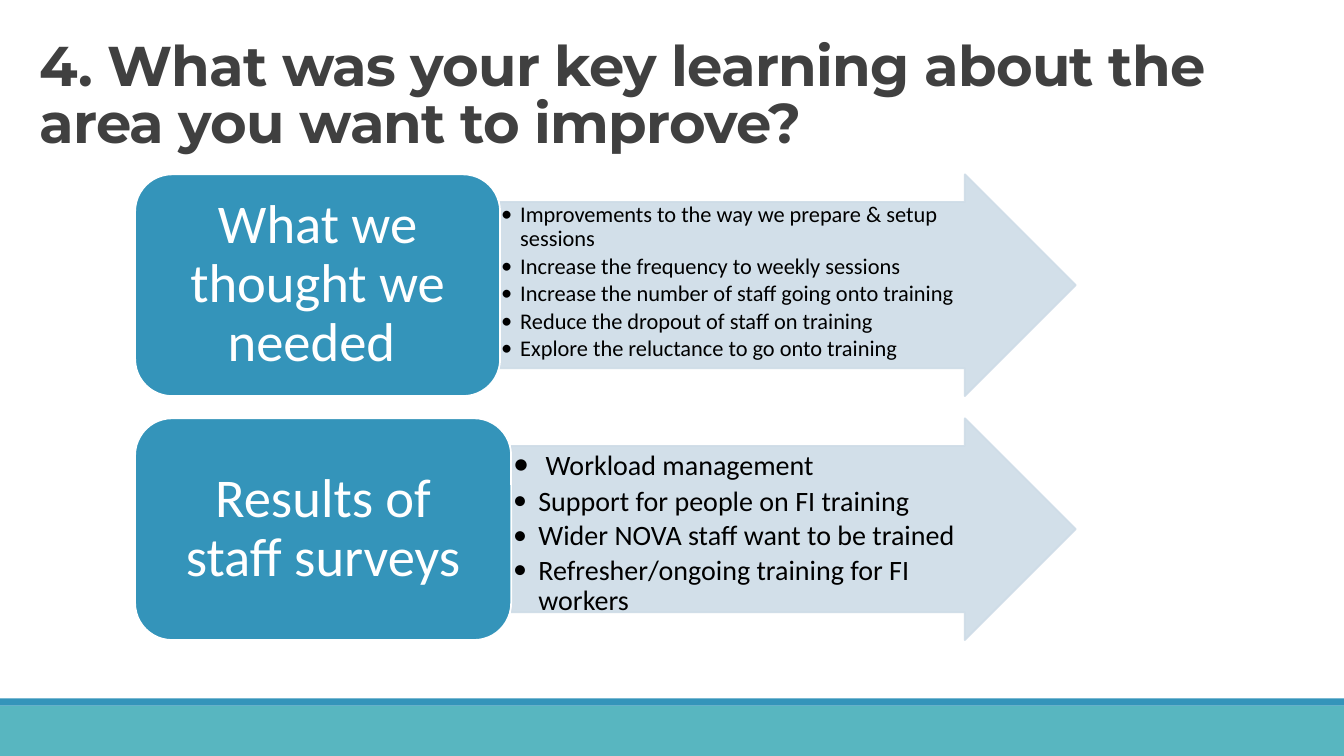
from lxml import etree
from pptx import Presentation
from pptx.dml.color import RGBColor
from pptx.enum.shapes import MSO_SHAPE
from pptx.enum.text import MSO_ANCHOR, MSO_AUTO_SIZE, PP_ALIGN
from pptx.oxml.ns import qn
from pptx.util import Inches, Pt

RECTANGLE, ROUNDED = MSO_SHAPE.RECTANGLE, MSO_SHAPE.ROUNDED_RECTANGLE
ARROW = MSO_SHAPE.RIGHT_ARROW
TOP, MIDDLE, BOTTOM = MSO_ANCHOR.TOP, MSO_ANCHOR.MIDDLE, MSO_ANCHOR.BOTTOM
LEFT, CENTER = PP_ALIGN.LEFT, PP_ALIGN.CENTER
COLORS = {"teal": "58B6C0", "blue": "3494BA", "pale": "CEDCE7",
          "title": "404040", "black": "000000", "white": "FFFFFF"}

presentation = Presentation()
presentation.slide_width = Inches(13.33)
presentation.slide_height = Inches(7.5)
slide = presentation.slides.add_slide(presentation.slide_layouts[5])


def add_block(kind, left, top, width, height, fill, line=None):
    shape = slide.shapes.add_shape(
        kind, Inches(left), Inches(top), Inches(width), Inches(height))
    shape.shadow.inherit = False
    shape.fill.solid()
    shape.fill.fore_color.rgb = RGBColor.from_string(COLORS[fill])
    if line:
        shape.line.color.rgb = RGBColor.from_string(COLORS[line])
        shape.line.width = Pt(1.25)
    else:
        shape.line.fill.background()
    return shape


def add_run(paragraph, text, size, color, font="Calibri"):
    run = paragraph.add_run()
    run.text = text
    run.font.size = Pt(size)
    run.font.name = font
    run.font.color.rgb = RGBColor.from_string(COLORS[color])
    return run


# Bottom bands
add_block(RECTANGLE, 0, 7, 13.33, 0.5, "teal")
add_block(RECTANGLE, 0, 6.93, 13.33, 0.07, "blue")

# Title
title = slide.shapes.title
title.left, title.top = Inches(0.29), Inches(0.08)
title.width, title.height = Inches(13.04), Inches(1.51)
title.text_frame.word_wrap = True
title.text_frame.auto_size = MSO_AUTO_SIZE.NONE
title.text_frame.vertical_anchor = BOTTOM
paragraph = title.text_frame.paragraphs[0]
paragraph.alignment = LEFT
paragraph.line_spacing = 0.85
run = add_run(paragraph, "4. What was your key learning about the area you want to improve?",
              40, "title", "Montserrat")
run.font.bold = True
run._r.get_or_add_rPr().set("spc", "-50")

# Rows: heading, heading width, bullet size, indent, inset, bullets as runs
rows = [
    ("What we thought we needed ", 3.62, 16, 0.19, 0.01, [
        [("Improvements to the way we prepare & setup sessions", 16)],
        [("Increase the frequency to weekly sessions", 16)],
        [("Increase the number of staff going onto training", 16)],
        [("Reduce the dropout of staff on training", 16)],
        [("Explore the reluctance to go onto training", 16)],
    ]),
    ("Results of staff surveys", 3.73, 20, 0.25, 0.02, [
        [(" ", 23), ("Workload management", 20)],
        [("Support for people on FI training", 20)],
        [("Wider NOVA staff want to be trained", 20)],
        [("Refresher/ongoing training for FI workers", 20)],
    ]),
]
BOX_LEFT, ARROW_RIGHT, ROW_TOP, ROW_HEIGHT, ROW_STEP = 1.34, 10.67, 1.73, 2.2, 2.42

for index, (heading, width, size, indent, inset, bullets) in enumerate(rows):
    top = ROW_TOP + index * ROW_STEP
    arrow_left = BOX_LEFT + width

    # Arrow with the bullet list
    arrow = add_block(ARROW, arrow_left, top, ARROW_RIGHT - arrow_left, ROW_HEIGHT,
                      "pale", "pale")
    arrow.adjustments[0], arrow.adjustments[1] = 0.75, 0.5
    for color in arrow._element.spPr.iter(qn("a:srgbClr")):
        etree.SubElement(color, qn("a:alpha")).set("val", "90000")
    frame = arrow.text_frame
    frame.word_wrap = True
    frame.vertical_anchor = TOP
    frame.margin_left = frame.margin_right = Inches(inset)
    frame.margin_top = frame.margin_bottom = Inches(inset)
    for number, bullet in enumerate(bullets):
        paragraph = frame.add_paragraph() if number else frame.paragraphs[0]
        paragraph.alignment = LEFT
        paragraph.level = 1
        paragraph.line_spacing = 0.9
        paragraph.space_after = Pt(0.15 * size)
        properties = paragraph._p.get_or_add_pPr()
        properties.set("marL", str(Inches(indent)))
        properties.set("indent", str(-Inches(indent)))
        etree.SubElement(properties, qn("a:buFont")).set("typeface", "Calibri")
        etree.SubElement(properties, qn("a:buChar")).set("char", "•")
        for text, run_size in bullet:
            add_run(paragraph, text, run_size, "black")

    # Heading box
    box = add_block(ROUNDED, BOX_LEFT, top, width, ROW_HEIGHT, "blue", "white")
    frame = box.text_frame
    frame.word_wrap = True
    frame.vertical_anchor = MIDDLE
    frame.margin_left = frame.margin_right = Inches(0.16)
    frame.margin_top = frame.margin_bottom = Inches(0.08)
    paragraph = frame.paragraphs[0]
    paragraph.alignment = CENTER
    paragraph.line_spacing = 0.9
    add_run(paragraph, heading, 39, "white")

presentation.save("out.pptx")
